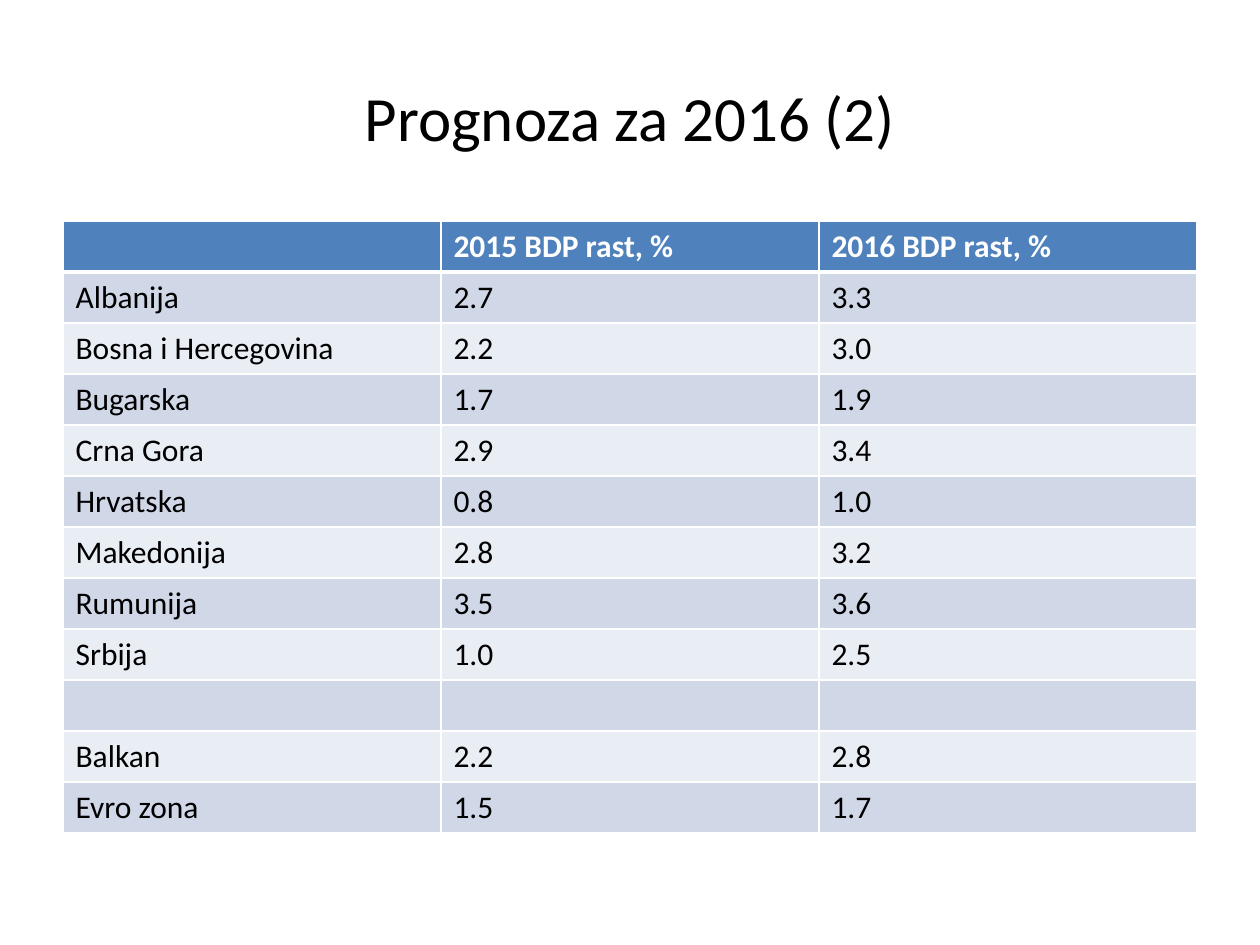
from dataclasses import dataclass

from lxml.etree import SubElement
from pptx import Presentation
from pptx.dml.color import RGBColor
from pptx.enum.text import MSO_ANCHOR, PP_ALIGN
from pptx.oxml.ns import qn
from pptx.util import Pt

PX = 914400 // 126


@dataclass(frozen=True)
class Theme:
    font: str = "Calibri"
    ink: str = "000000"
    white: str = "FFFFFF"
    head: str = "4F81BD"
    odd: str = "D0D8E8"
    even: str = "E9EDF4"
    title: int = 36
    body: int = 18
    thin: int = 1
    thick: int = 3


theme = Theme()


def write(frame, text, size=theme.body, color=theme.ink, bold=False,
          align=PP_ALIGN.LEFT):
    para = frame.paragraphs[0]
    para.alignment = align
    para.font.size = Pt(size)
    if text:
        run = para.add_run()
        run.text = text
        run.font.name = theme.font
        run.font.size = Pt(size)
        run.font.bold = bold
        run.font.color.rgb = RGBColor.from_string(color)


def border(cell, widths):
    props = cell._tc.get_or_add_tcPr()
    for spot, (side, width) in enumerate(widths.items()):
        line = props.makeelement(qn(f"a:ln{side}"), {"w": str(Pt(width))})
        fill = SubElement(line, qn("a:solidFill"))
        SubElement(fill, qn("a:srgbClr"), val=theme.white)
        props.insert(spot, line)


deck = Presentation()
deck.slide_width = 1260 * PX
deck.slide_height = 945 * PX
slide = deck.slides.add_slide(deck.slide_layouts[6])

title = slide.shapes.add_textbox(63 * PX, 38 * PX, 1134 * PX, 157 * PX)
title.text_frame.word_wrap = True
title.text_frame.vertical_anchor = MSO_ANCHOR.MIDDLE
write(title.text_frame, "Prognoza za 2016 (2)", size=theme.title,
      align=PP_ALIGN.CENTER)

rows = [
    ("", "2015 BDP rast, %", "2016 BDP rast, %"),
    ("Albanija", "2.7", "3.3"),
    ("Bosna i Hercegovina", "2.2", "3.0"),
    ("Bugarska", "1.7", "1.9"),
    ("Crna Gora", "2.9", "3.4"),
    ("Hrvatska", "0.8", "1.0"),
    ("Makedonija", "2.8", "3.2"),
    ("Rumunija", "3.5", "3.6"),
    ("Srbija", "1.0", "2.5"),
    ("", "", ""),
    ("Balkan", "2.2", "2.8"),
    ("Evro zona", "1.5", "1.7"),
]

table = slide.shapes.add_table(len(rows), 3, 63 * PX, 221 * PX,
                               1134 * PX, len(rows) * 51 * PX).table
for col in table.columns:
    col.width = 378 * PX

for i, row in enumerate(rows):
    table.rows[i].height = 51 * PX
    top = theme.thick if i == 1 else theme.thin
    base = theme.thick if i == 0 else theme.thin
    shade = theme.odd if i % 2 else theme.even
    for j, text in enumerate(row):
        cell = table.cell(i, j)
        cell.fill.solid()
        cell.fill.fore_color.rgb = RGBColor.from_string(
            shade if i else theme.head)
        border(cell, {"L": theme.thin, "R": theme.thin, "T": top, "B": base})
        write(cell.text_frame, text, bold=i == 0,
              color=theme.ink if i else theme.white)

deck.save("out.pptx")
